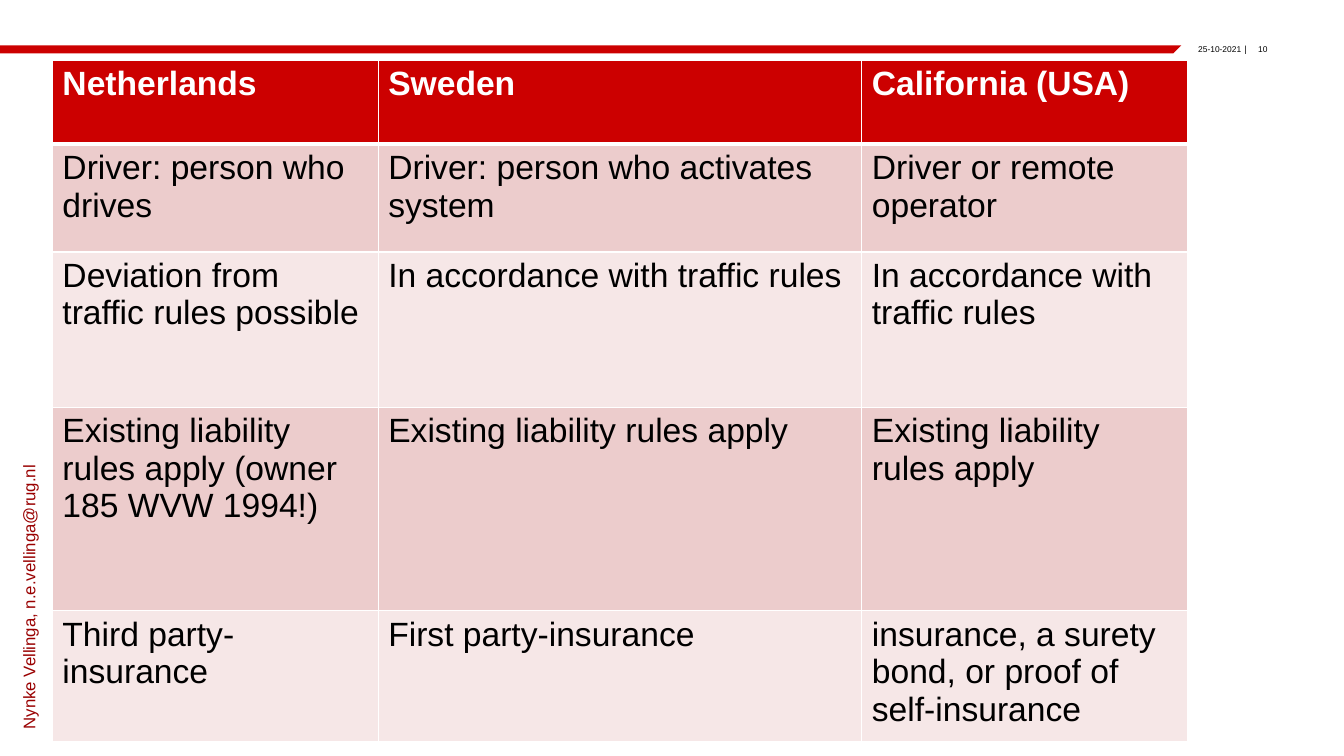
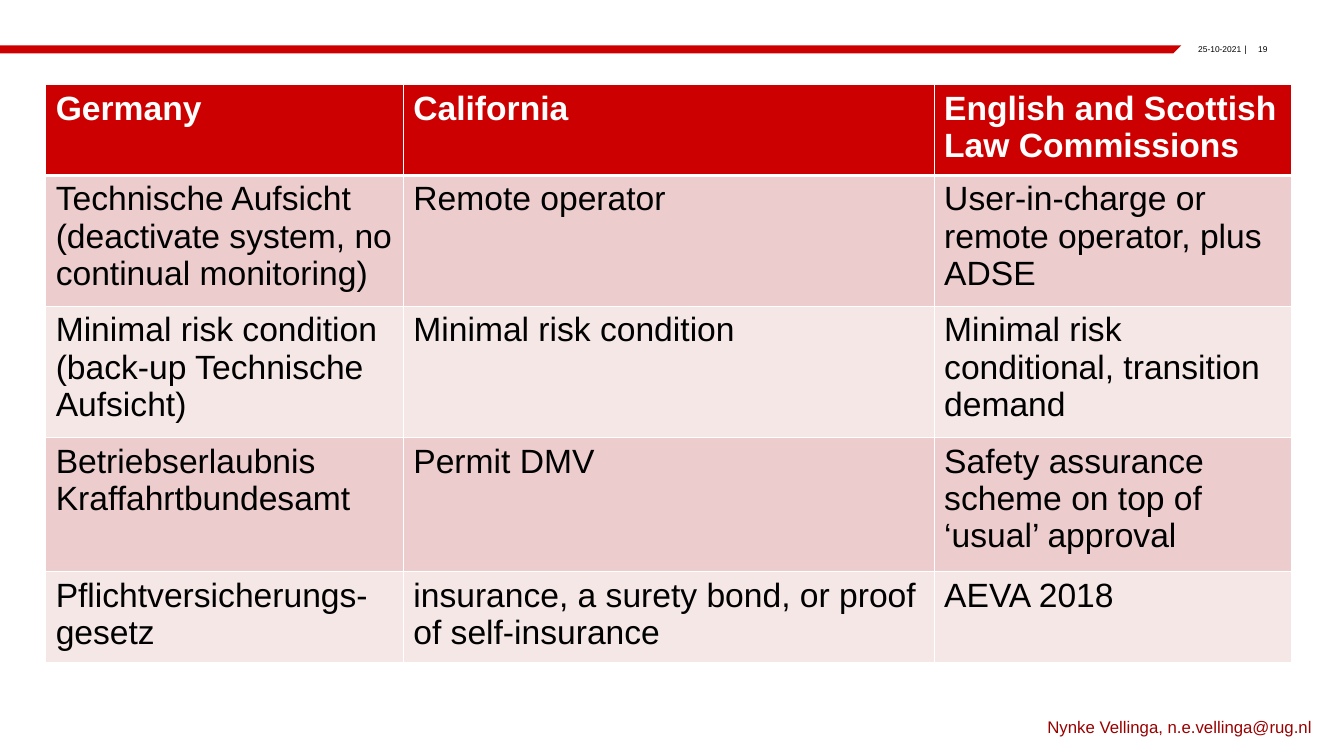
from lxml.etree import SubElement
from pptx import Presentation
from pptx.dml.color import RGBColor
from pptx.enum.text import PP_ALIGN
from pptx.oxml.ns import qn
from pptx.util import Inches, Pt

RED = RGBColor(0xCC, 0x00, 0x00)
DARK = RGBColor(0x99, 0x00, 0x00)
ROSE = RGBColor(0xEC, 0xCC, 0xCC)
PALE = RGBColor(0xF6, 0xE7, 0xE7)
WHITE = RGBColor(0xFF, 0xFF, 0xFF)
BLACK = RGBColor(0x00, 0x00, 0x00)

WIDE, HIGH = Inches(13.33), Inches(7.5)
HEAD = dict(name="Arial", size=Pt(24), bold=True)
BODY = HEAD | dict(bold=False)
SMALL = dict(name="Arial", size=Pt(6))
MARK = SMALL | dict(name="DejaVu Sans")
CREDIT = dict(name="Arial", size=Pt(12))
FLUSH = dict(margin_left=0, margin_right=0, margin_top=0, margin_bottom=0)
SHARES = (0.287, 0.426, 0.287)


def col(part):
    return round(WIDE * part / 100)


def row(part):
    return round(HIGH * part / 100)


def format(item, values):
    for key, value in values.items():
        setattr(item, key, value)


def write(frame, text, font, color, align=PP_ALIGN.LEFT):
    para = frame.paragraphs[0]
    para.alignment = align
    run = para.add_run()
    run.text = text
    format(run.font, font)
    run.font.color.rgb = color


def band(slide, number):
    top, base = row(6), row(7.07)
    pen = slide.shapes.build_freeform(0, top)
    pen.add_line_segments([(col(87.9), top), (col(87.3), base), (0, base)])
    strip = pen.convert_to_shape()
    strip.shadow.inherit = False
    strip.fill.solid()
    strip.fill.fore_color.rgb = RED
    strip.line.fill.background()
    parts = (
        (86.12, 6.23, "25-10-2021", SMALL, PP_ALIGN.RIGHT),
        (92.57, 0.45, "|", MARK, PP_ALIGN.LEFT),
        (92.72, 1.58, str(number), SMALL, PP_ALIGN.RIGHT),
    )
    for left, width, text, font, align in parts:
        box = slide.shapes.add_textbox(col(left), row(5.87), col(width), row(2))
        format(box.text_frame, FLUSH | dict(word_wrap=font is not MARK))
        write(box.text_frame, text, font, BLACK, align)


def border(cell, line):
    props = cell._tc.get_or_add_tcPr()
    for side in "LRTB":
        thick = (side == "B" and line == 0) or (side == "T" and line == 1)
        edge = SubElement(props, qn("a:ln" + side), w=str(Pt(3 if thick else 1)))
        fill = SubElement(edge, qn("a:solidFill"))
        SubElement(fill, qn("a:srgbClr"), val=str(WHITE))


def grid(slide, box, rows, texts):
    left, top, width = box
    frame = slide.shapes.add_table(
        len(rows), len(SHARES), col(left), row(top), col(width), row(sum(rows)))
    table = frame.table
    for lane, share in zip(table.columns, SHARES):
        lane.width = col(width * share)
    for line, (height, words) in enumerate(zip(rows, texts)):
        table.rows[line].height = row(height)
        shade = RED if line == 0 else ROSE if line % 2 else PALE
        font, color = (BODY, BLACK) if line else (HEAD, WHITE)
        for cell, text in zip(table.rows[line].cells, words):
            border(cell, line)
            cell.fill.solid()
            cell.fill.fore_color.rgb = shade
            write(cell.text_frame, text, font, color)


def credit(slide, across, down, turn):
    width, height = col(22.43), row(4)
    box = slide.shapes.add_textbox(
        col(across) - width // 2, row(down) - height // 2, width, height)
    box.rotation = turn
    box.text_frame.word_wrap = True
    write(box.text_frame, "Nynke Vellinga, n.e.vellinga@rug.nl", CREDIT, DARK)


PAGES = (
    dict(
        number=10, box=(3.9, 8, 84.47), rows=(11.07, 14.27, 20.53, 26.93, 16.2),
        sign=(2.14, 77.87, 270),
        texts=(
            ("Netherlands", "Sweden", "California (USA)"),
            ("Driver: person who drives", "Driver: person who activates system",
             "Driver or remote operator"),
            ("Deviation from traffic rules possible",
             "In accordance with traffic rules",
             "In accordance with traffic rules"),
            ("Existing liability rules apply (owner 185 WVW 1994!)",
             "Existing liability rules apply", "Existing liability rules apply"),
            ("Third party- insurance", "First party-insurance",
             "insurance, a surety bond, or proof of self-insurance"),
        ),
    ),
    dict(
        number=19, box=(3.4, 11.2, 92.72), rows=(11.07, 16.2, 16.2, 17.73, 11.07),
        sign=(88.41, 96.13, 0),
        texts=(
            ("Germany", "California", "English and Scottish Law Commissions"),
            ("Technische Aufsicht (deactivate system, no continual monitoring)",
             "Remote operator", "User-in-charge or remote operator, plus ADSE"),
            ("Minimal risk condition (back-up Technische Aufsicht)",
             "Minimal risk condition",
             "Minimal risk conditional, transition demand"),
            ("Betriebserlaubnis Kraffahrtbundesamt", "Permit DMV",
             "Safety assurance scheme on top of ‘usual’ approval"),
            ("Pflichtversicherungs-gesetz",
             "insurance, a surety bond, or proof of self-insurance", "AEVA 2018"),
        ),
    ),
)


def main():
    deck = Presentation()
    format(deck, dict(slide_width=WIDE, slide_height=HIGH))
    for page in PAGES:
        slide = deck.slides.add_slide(deck.slide_layouts[6])
        band(slide, page["number"])
        grid(slide, page["box"], page["rows"], page["texts"])
        credit(slide, *page["sign"])
    deck.save("out.pptx")


if __name__ == "__main__":
    main()
